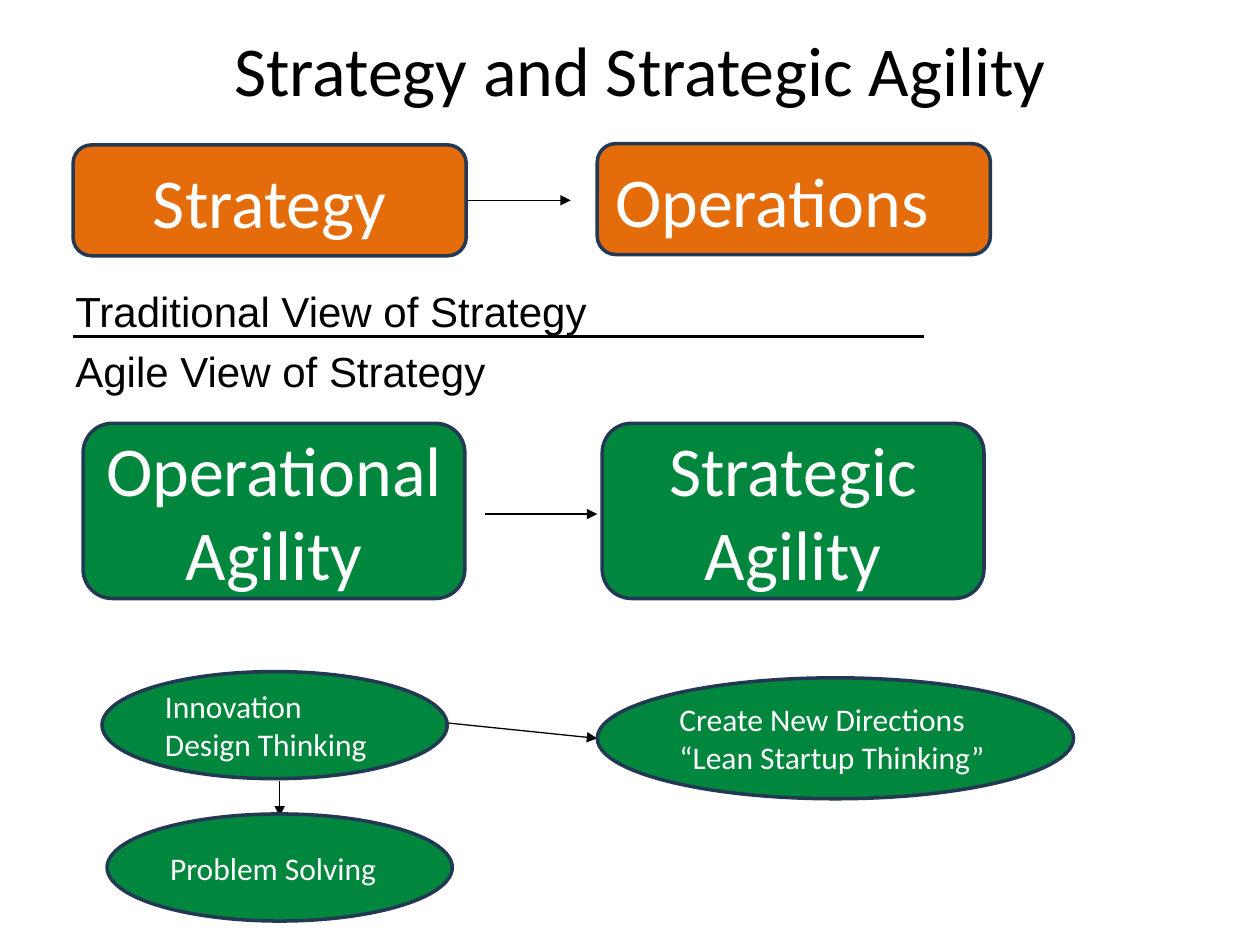
from lxml.etree import SubElement
from pptx import Presentation
from pptx.dml.color import RGBColor
from pptx.enum.shapes import MSO_CONNECTOR, MSO_SHAPE
from pptx.enum.text import MSO_ANCHOR, PP_ALIGN
from pptx.oxml.ns import qn
from pptx.util import Inches, Pt

BLACK, WHITE = "000000", "FFFFFF"
ORANGE, GREEN, NAVY = "E46C0A", "00863D", "233953"


def color(code):
    return RGBColor.from_string(code)


def write(frame, text, size=18, font="Calibri", ink=WHITE,
          align=PP_ALIGN.LEFT, anchor=MSO_ANCHOR.MIDDLE, gap=0):
    """Fill a frame, one paragraph a line, with gap points between them."""
    frame.word_wrap = True
    frame.vertical_anchor = anchor
    for i, line in enumerate(text.split("\n")):
        para = frame.add_paragraph() if i else frame.paragraphs[0]
        para.alignment = align
        if i:
            para.space_before = Pt(gap)
        run = para.add_run()
        run.text = line
        run.font.size = Pt(size)
        run.font.name = font
        run.font.color.rgb = color(ink)


class Deck:
    def __init__(self):
        self.prs = Presentation()
        self.prs.slide_width = Inches(10)
        self.prs.slide_height = Inches(7.5)
        self.slide = self.prs.slides.add_slide(self.prs.slide_layouts[6])
        self.edge = 2

    def text(self, box, text, **style):
        area = self.slide.shapes.add_textbox(*map(Inches, box))
        write(area.text_frame, text, anchor=MSO_ANCHOR.TOP, ink=BLACK, **style)

    def line(self, start, end, width=0.75, head=True):
        line = self.slide.shapes.add_connector(
            MSO_CONNECTOR.STRAIGHT, *map(Inches, start + end))
        line.line.color.rgb = color(BLACK)
        line.line.width = Pt(width)
        if head:
            SubElement(line.line._get_or_add_ln(), qn("a:tailEnd"), type="triangle")
        SubElement(line._element.spPr, qn("a:effectLst"))
        return line

    def shape(self, kind, box, fill, text, **style):
        shape = self.slide.shapes.add_shape(kind, *map(Inches, box))
        shape.shadow.inherit = False
        shape.fill.solid()
        shape.fill.fore_color.rgb = color(fill)
        shape.line.color.rgb = color(NAVY)
        shape.line.width = Pt(self.edge)
        write(shape.text_frame, text, **style)
        return shape

    def box(self, box, fill, text, align=PP_ALIGN.CENTER):
        return self.shape(MSO_SHAPE.ROUNDED_RECTANGLE, box, fill, text,
                          size=40, align=align)

    def oval(self, box, text):
        return self.shape(MSO_SHAPE.OVAL, box, GREEN, text)


def main():
    deck = Deck()
    deck.text((0.58, 0.16, 9, 1.25), "Strategy and Strategic Agility",
              size=40, align=PP_ALIGN.CENTER)
    deck.text((0.5, 2.22, 9, 3.7),
              "Traditional View of Strategy\nAgile View of Strategy",
              size=24, font="Arial", gap=5.5)

    # Lines lie behind the boxes and ovals
    flow = deck.line((3.7, 1.59), (4.53, 1.59))
    deck.line((3.85, 4.08), (4.74, 4.08))
    deck.line((0.58, 2.67), (7.33, 2.67), width=1.5, head=False)
    deck.line((3.28, 5.71), (4.74, 5.86))
    deck.line((2.22, 6.2), (2.22, 6.48))

    plan = deck.box((0.58, 1.15, 3.12, 0.88), ORANGE, "Strategy")
    deck.box((4.74, 1.14, 3.12, 0.88), ORANGE, "Operations", PP_ALIGN.LEFT)
    flow.begin_connect(plan, 3)

    for left, text in ((0.66, "Operational Agility"), (4.78, "Strategic Agility")):
        deck.box((left, 3.36, 3.03, 1.39), GREEN, text)

    deck.oval((0.81, 5.33, 2.74, 0.85), "Innovation\nDesign Thinking")
    deck.oval((4.74, 5.38, 3.78, 0.96),
              "Create New Directions\n“Lean Startup Thinking”")
    deck.oval((0.85, 6.46, 2.74, 0.85), "Problem Solving")

    deck.prs.save("out.pptx")


if __name__ == "__main__":
    main()
